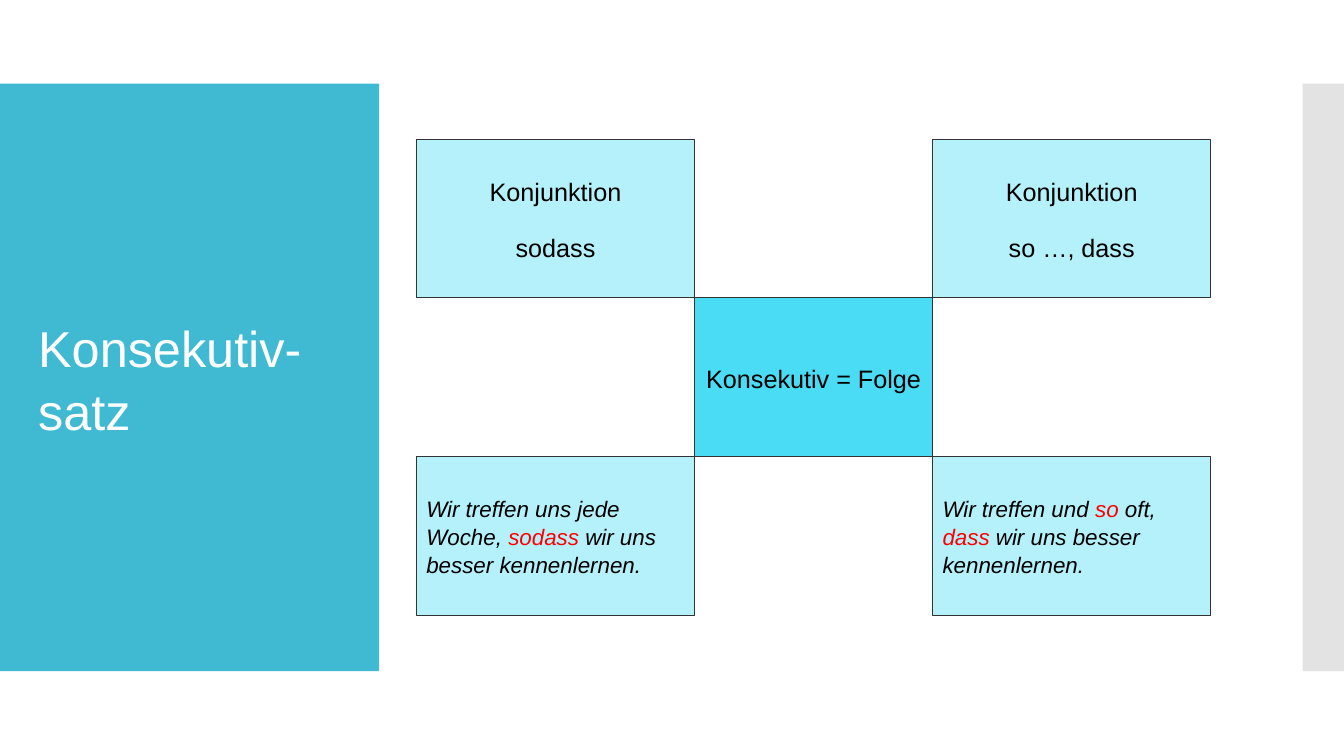
from dataclasses import dataclass

from lxml.etree import SubElement
from pptx import Presentation
from pptx.dml.color import RGBColor
from pptx.enum.shapes import MSO_SHAPE as Preset
from pptx.enum.text import MSO_ANCHOR as Anchor, PP_ALIGN as Align
from pptx.oxml.ns import qn
from pptx.util import Inches, Pt

COLORS = {
    "panel": "40BAD2", "edge": "C8C8C8", "outline": "333333",
    "pale": "B5F1FB", "bright": "4ADCF5",
    "text": "000000", "title": "FFFFFF", "accent": "FF0000",
}
FONT = "Arial"
SLIDE_WIDTH, SLIDE_HEIGHT = 13.33, 7.5

# Grid of the five cards, in inches
COLUMN_EDGES = (4.13, 6.89, 9.25, 12.01)
GRID_TOP, ROW_HEIGHT = 1.38, 1.575
BAND_TOP, BAND_HEIGHT = 0.83, 5.83

Span = tuple[str, str]  # text and colour name


@dataclass(frozen=True)
class Card:
    column: int
    row: int
    paragraphs: list[list[Span]]
    fill: str = "pale"
    size: int = 18
    italic: bool = False
    align: Align = Align.CENTER


def example(column: int, spans: list[Span]) -> Card:
    return Card(column, 2, [spans], size=16, italic=True, align=Align.LEFT)


def conjunction(column: int, word: str) -> Card:
    return Card(column, 0, [[("Konjunktion", "text")], [(word, "text")]])


CARDS = [
    conjunction(0, "sodass"),
    conjunction(2, "so …, dass"),
    Card(1, 1, [[("Konsekutiv = Folge", "text")]], fill="bright"),
    example(0, [("Wir treffen uns jede Woche, ", "text"), ("sodass", "accent"),
                (" wir uns besser kennenlernen.", "text")]),
    example(2, [("Wir treffen und ", "text"), ("so", "accent"), (" oft, \n", "text"),
                ("dass", "accent"), (" wir uns besser kennenlernen.", "text")]),
]


def color(name: str) -> RGBColor:
    return RGBColor.from_string(COLORS[name])


def add_box(page, left: float, top: float, width: float, height: float, fill: str):
    box = page.shapes.add_shape(Preset.RECTANGLE, Inches(left), Inches(top),
                                Inches(width), Inches(height))
    box.shadow.inherit = False
    box.fill.solid()
    box.fill.fore_color.rgb = color(fill)
    box.line.fill.background()
    return box


def write(box, paragraphs: list[list[Span]], *, size: int, italic: bool = False,
          align: Align = Align.LEFT, gap: float = 17) -> None:
    frame = box.text_frame
    frame.word_wrap = True
    frame.vertical_anchor = Anchor.MIDDLE
    for index, spans in enumerate(paragraphs):
        para = frame.add_paragraph() if index else frame.paragraphs[0]
        para.alignment = align
        para.line_spacing = 1.05
        if index:
            para.space_before = Pt(gap)
        for text, name in spans:
            span = para.add_run()
            span.text = text.rstrip("\n")
            span.font.name = FONT
            span.font.size = Pt(size)
            span.font.italic = italic
            span.font.color.rgb = color(name)
            if text.endswith("\n"):
                para.add_line_break()


def add_card(page, card: Card) -> None:
    left, right = COLUMN_EDGES[card.column:card.column + 2]
    box = add_box(page, left, GRID_TOP + card.row * ROW_HEIGHT,
                  right - left, ROW_HEIGHT, card.fill)
    box.line.color.rgb = color("outline")
    box.line.width = Pt(0)
    write(box, card.paragraphs, size=card.size, italic=card.italic, align=card.align)


def main() -> None:
    deck = Presentation()
    deck.slide_width, deck.slide_height = Inches(SLIDE_WIDTH), Inches(SLIDE_HEIGHT)
    page = deck.slides.add_slide(deck.slide_layouts[6])

    # Side panels, the right one half transparent
    add_box(page, 0, BAND_TOP, 3.76, BAND_HEIGHT, "panel")
    edge = add_box(page, 12.92, BAND_TOP, SLIDE_WIDTH - 12.92, BAND_HEIGHT, "edge")
    tint = edge.fill._xPr.find(qn("a:solidFill"))[0]
    SubElement(tint, qn("a:alpha"), val="50000")

    # Title
    title = page.shapes.add_textbox(Inches(0.28), Inches(1.23), Inches(3.22), Inches(5.03))
    write(title, [[("Konsekutiv-satz", "title")]], size=36)

    # Cards
    for card in CARDS:
        add_card(page, card)

    deck.save("out.pptx")


if __name__ == "__main__":
    main()
